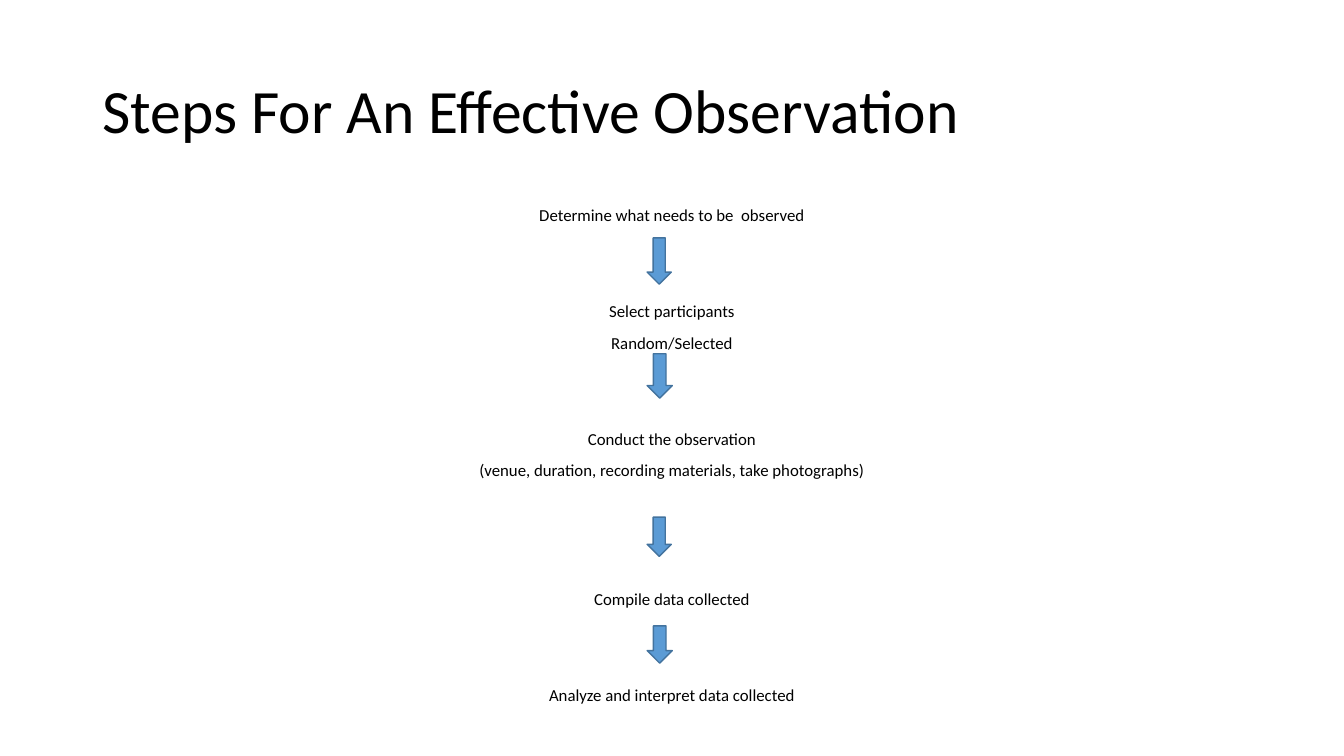
"""Build the slide that lists the steps for an effective observation."""
import dataclasses

import pptx
import pptx.dml.color
import pptx.enum.shapes
import pptx.enum.text
import pptx.oxml
import pptx.oxml.ns
import pptx.shapes.base
import pptx.slide
import pptx.text.text
import pptx.util

Pt = pptx.util.Pt
Color = pptx.dml.color.RGBColor
Align = pptx.enum.text.PP_ALIGN
Anchor = pptx.enum.text.MSO_ANCHOR


@dataclasses.dataclass(frozen=True)
class Theme:
    font: str = "Calibri"
    title_size: float = 44
    body_size: float = 12
    text: Color = Color(0x00, 0x00, 0x00)
    background: Color = Color(0xFF, 0xFF, 0xFF)
    arrow_fill: Color = Color(0x5B, 0x9B, 0xD5)
    arrow_line: Color = Color(0x43, 0x73, 0x9E)


@dataclasses.dataclass(frozen=True)
class Box:
    left: float
    top: float
    width: float
    height: float


@dataclasses.dataclass(frozen=True)
class Step:
    text: str
    row: int


THEME = Theme()
TITLE = "Steps For An Effective Observation"
TITLE_BOX = Box(66, 28.8, 828, 104.4)
BODY_BOX = Box(66, 144, 828, 342.72)
LINE_SPACING = 0.9
LINE_HEIGHT = 13.18
ROW_PITCH = 22.95
STEPS = (
    Step("Determine what needs to be  observed", 0),
    Step("Select participants", 3),
    Step("Random/Selected", 4),
    Step("Conduct the observation", 7),
    Step("(venue, duration, recording materials, take photographs)", 8),
    Step("Compile data collected", 12),
    Step("Analyze and interpret data collected", 15),
)
ARROWS = (
    Box(462.24, 169.92, 17.28, 33.12),
    Box(462.24, 252.72, 18, 31.68),
    Box(462.24, 369.36, 17.28, 28.08),
    Box(462.24, 447.12, 18, 26.64),
)


def apply_format(target: object, values: dict[str, object]) -> None:
    for name, value in values.items():
        setattr(target, name, value)


def place(shape: pptx.shapes.base.BaseShape, box: Box) -> None:
    apply_format(shape, {name: Pt(value) for name, value in dataclasses.asdict(box).items()})


def format_frame(frame: pptx.text.text.TextFrame, anchor: Anchor) -> None:
    apply_format(frame, {
        "auto_size": pptx.enum.text.MSO_AUTO_SIZE.NONE,
        "word_wrap": True,
        "vertical_anchor": anchor,
    })


def write_paragraph(paragraph: pptx.text.text._Paragraph, text: str, size: float,
                    alignment: Align, space_before: float) -> None:
    apply_format(paragraph, {
        "alignment": alignment,
        "line_spacing": LINE_SPACING,
        "space_before": Pt(space_before),
        "space_after": Pt(0),
    })
    run = paragraph.add_run()
    run.text = text
    apply_format(run.font, {"name": THEME.font, "size": Pt(size)})
    run.font.color.rgb = THEME.text


def remove_bullet(paragraph: pptx.text.text._Paragraph) -> None:
    properties = paragraph._p.get_or_add_pPr()
    properties.set("marL", "0")
    properties.set("indent", "0")
    properties.append(pptx.oxml.parse_xml(f"<a:buNone {pptx.oxml.ns.nsdecls('a')}/>"))


def write_title(slide: pptx.slide.Slide) -> None:
    title = slide.shapes.title
    place(title, TITLE_BOX)
    format_frame(title.text_frame, Anchor.MIDDLE)
    write_paragraph(title.text_frame.paragraphs[0], TITLE, THEME.title_size, Align.LEFT, 0)


def write_steps(slide: pptx.slide.Slide) -> None:
    body = slide.placeholders[1]
    place(body, BODY_BOX)
    frame = body.text_frame
    format_frame(frame, Anchor.TOP)
    previous = None
    for step in STEPS:
        paragraph = frame.add_paragraph() if previous else frame.paragraphs[0]
        gap = (step.row - previous.row) * ROW_PITCH - LINE_HEIGHT if previous else 0
        write_paragraph(paragraph, step.text, THEME.body_size, Align.CENTER, round(gap, 2))
        remove_bullet(paragraph)
        previous = step


def draw_arrow(slide: pptx.slide.Slide, box: Box) -> None:
    arrow = slide.shapes.add_shape(
        pptx.enum.shapes.MSO_SHAPE.DOWN_ARROW,
        Pt(box.left), Pt(box.top), Pt(box.width), Pt(box.height),
    )
    arrow.shadow.inherit = False
    arrow.fill.solid()
    arrow.fill.fore_color.rgb = THEME.arrow_fill
    arrow.line.color.rgb = THEME.arrow_line
    arrow.line.width = Pt(1)


def main() -> None:
    presentation = pptx.Presentation()
    apply_format(presentation, {"slide_width": Pt(960), "slide_height": Pt(540)})
    slide = presentation.slides.add_slide(presentation.slide_layouts[1])
    slide.background.fill.solid()
    slide.background.fill.fore_color.rgb = THEME.background
    write_title(slide)
    write_steps(slide)
    for box in ARROWS:
        draw_arrow(slide, box)
    presentation.save("out.pptx")


if __name__ == "__main__":
    main()
